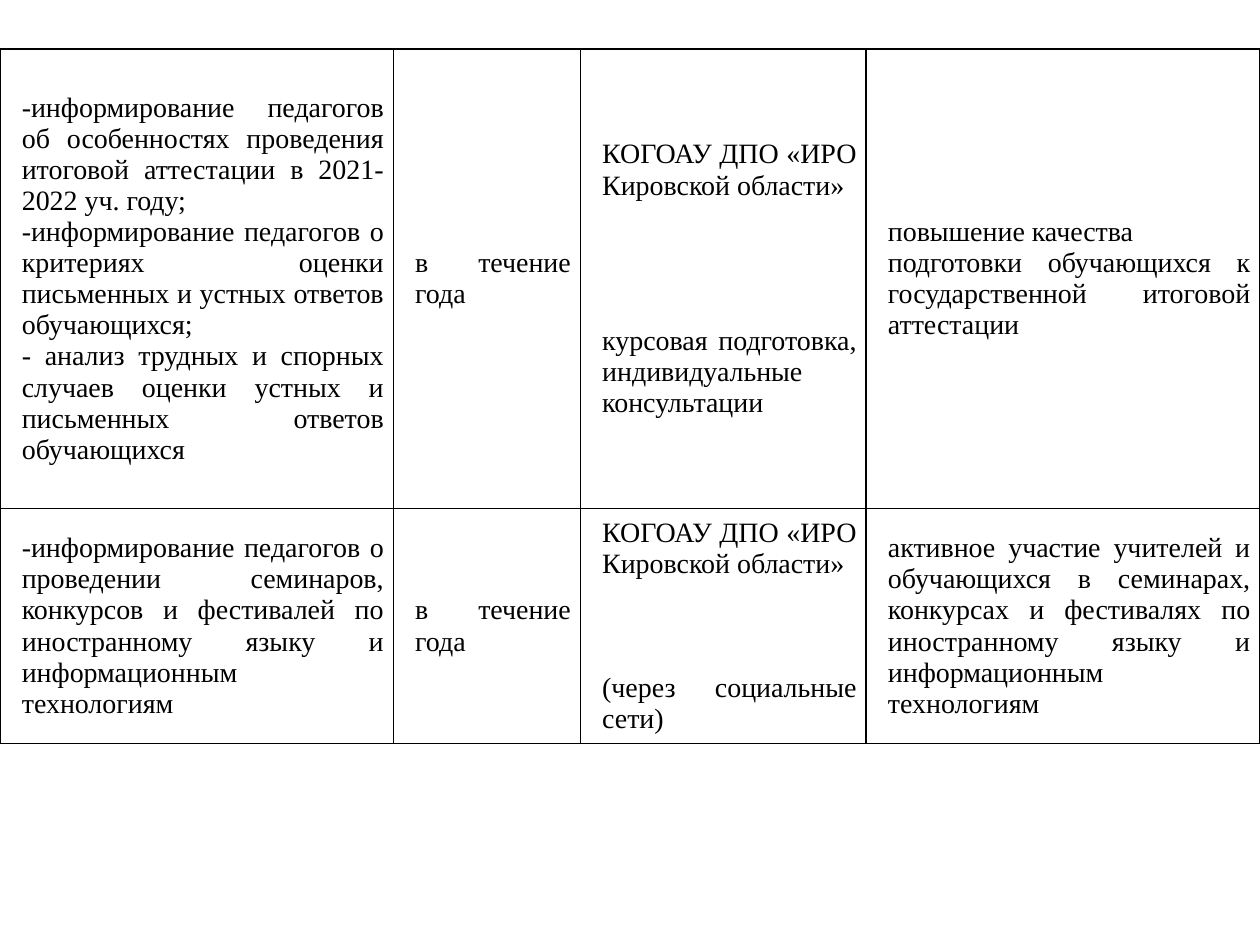
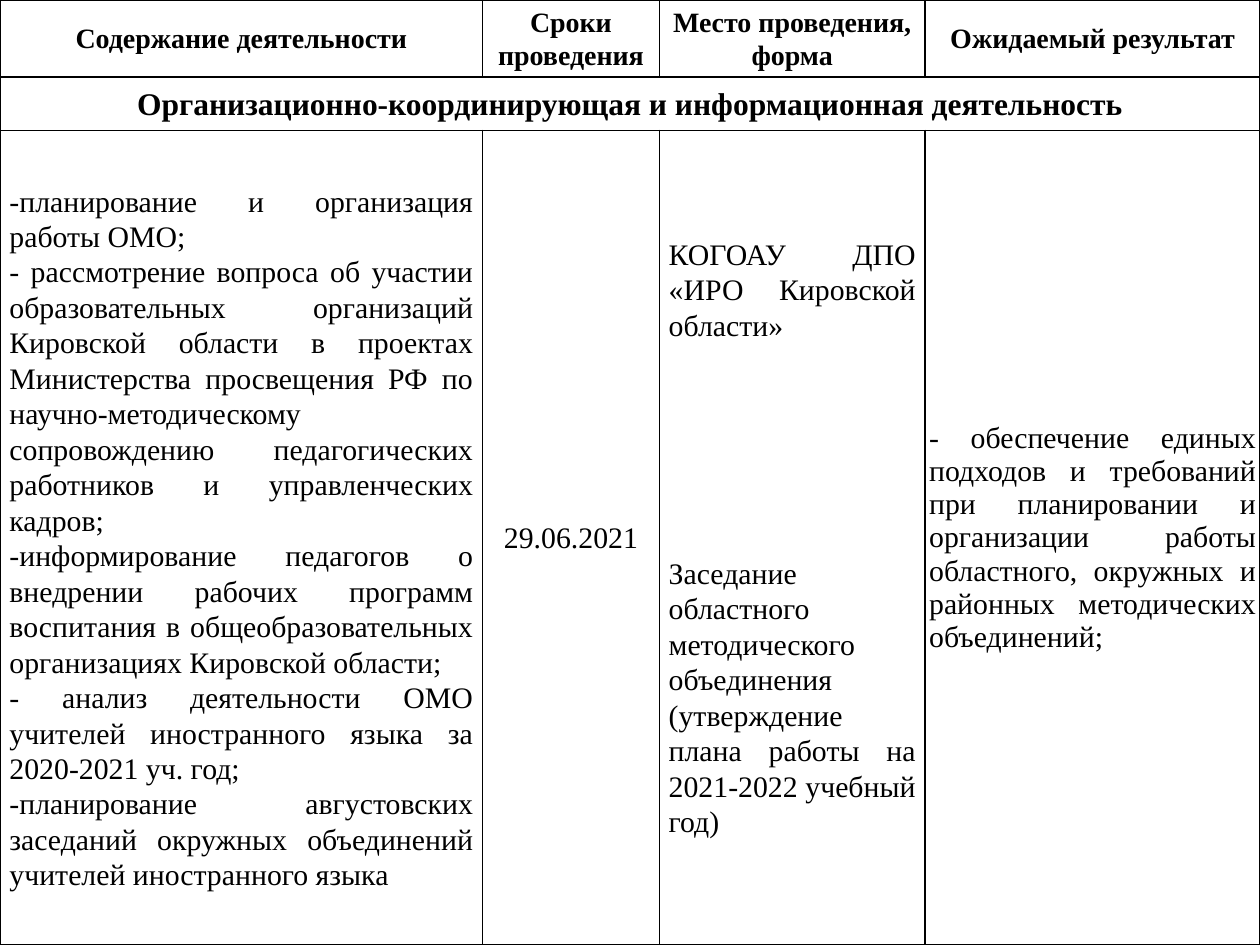
from dataclasses import dataclass

from lxml.etree import SubElement
from pptx import Presentation
from pptx.dml.color import RGBColor
from pptx.enum.text import MSO_ANCHOR, PP_ALIGN
from pptx.oxml.ns import qn
from pptx.util import Cm, Pt

BLACK = RGBColor(0x00, 0x00, 0x00)
WHITE = RGBColor(0xFF, 0xFF, 0xFF)
FONT = "Times New Roman"
SLIDE_WIDTH, SLIDE_HEIGHT = 25.4, 19.05
BORDER = Pt(1)
WIDE_MARGIN, NARROW_MARGIN = 0.19, 0.08
INSTITUTE = "КОГОАУ ДПО «ИРО Кировской области»"


@dataclass(frozen=True)
class CellStyle:
    size: float
    align: PP_ALIGN = PP_ALIGN.JUSTIFY
    bold: bool = False
    margin: float = WIDE_MARGIN
    indent: float = 0
    line_spacing: float = 1.07


ACTIVITY = CellStyle(16, indent=0.25, line_spacing=1.0)
HEADING = CellStyle(16, PP_ALIGN.CENTER, True, NARROW_MARGIN)
SECTION = CellStyle(18, PP_ALIGN.CENTER, True, NARROW_MARGIN)
PLAN = CellStyle(17)
DATE = CellStyle(17, PP_ALIGN.CENTER)
RESULT = CellStyle(17, margin=NARROW_MARGIN, line_spacing=1.0)


def draw_borders(cell):
    properties = cell._tc.get_or_add_tcPr()
    for side in ("lnL", "lnR", "lnT", "lnB"):
        line = SubElement(properties, qn(f"a:{side}"), w=str(BORDER))
        fill = SubElement(line, qn("a:solidFill"))
        SubElement(fill, qn("a:srgbClr"), val=str(BLACK))


def format_cell(cell):
    draw_borders(cell)
    cell.fill.solid()
    cell.fill.fore_color.rgb = WHITE


def write_cell(cell, texts, style, gap=0):
    cell.vertical_anchor = MSO_ANCHOR.MIDDLE
    cell.margin_left = cell.margin_right = Cm(style.margin)
    cell.margin_top = cell.margin_bottom = 0
    cell.text = "\n".join(texts)
    for index, paragraph in enumerate(cell.text_frame.paragraphs):
        paragraph.alignment = style.align
        paragraph.line_spacing = style.line_spacing
        if index and gap:
            paragraph.space_before = Pt(gap)
        if style.indent:
            properties = paragraph._p.get_or_add_pPr()
            properties.set("marL", str(Cm(style.indent)))
            properties.set("indent", "0")
        font = paragraph.font
        font.name, font.size, font.bold = FONT, Pt(style.size), style.bold
        font.color.rgb = BLACK


def add_grid(slide, top, widths, heights):
    grid = slide.shapes.add_table(
        len(heights), len(widths), 0, Cm(top), Cm(sum(widths)), Cm(sum(heights))
    ).table
    grid.first_row = grid.horz_banding = False
    for column, width in zip(grid.columns, widths):
        column.width = Cm(width)
    for row, height in zip(grid.rows, heights):
        row.height = Cm(height)
    for cell in grid.iter_cells():
        format_cell(cell)
    return grid


def build_year_activities(slide):
    grid = add_grid(slide, 0.99, (7.93, 3.77, 5.76, 7.94), (9.26, 4.74))
    activities = (
        (
            (
                "-информирование педагогов об особенностях проведения итоговой "
                "аттестации в 2021-2022 уч. году;",
                "-информирование педагогов о критериях оценки письменных и устных "
                "ответов обучающихся;",
                "- анализ трудных и спорных случаев оценки устных и письменных "
                "ответов обучающихся",
            ),
            "курсовая подготовка, индивидуальные консультации",
            71,
            (
                "повышение качества",
                "подготовки обучающихся к государственной итоговой аттестации",
            ),
        ),
        (
            (
                "-информирование педагогов о проведении семинаров, конкурсов и "
                "фестивалей по иностранному языку и информационным технологиям",
            ),
            "(через социальные сети)",
            53,
            (
                "активное участие учителей и обучающихся в семинарах, конкурсах и "
                "фестивалях по иностранному языку и информационным технологиям",
            ),
        ),
    )
    for row, (content, form, form_gap, results) in enumerate(activities):
        write_cell(grid.cell(row, 0), content, ACTIVITY)
        write_cell(grid.cell(row, 1), ("в течение года",), ACTIVITY)
        write_cell(grid.cell(row, 2), (INSTITUTE, form), ACTIVITY, form_gap)
        write_cell(grid.cell(row, 3), results, ACTIVITY)


def build_coordination_plan(slide):
    grid = add_grid(slide, 0, (9.73, 3.56, 5.36, 6.75), (1.55, 1.08, 16.42))
    headings = (
        "Содержание деятельности",
        "Сроки проведения",
        "Место проведения, форма",
        "Ожидаемый результат",
    )
    for column, heading in enumerate(headings):
        write_cell(grid.cell(0, column), (heading,), HEADING)

    section = grid.cell(1, 0)
    section.merge(grid.cell(1, 3))
    write_cell(
        section,
        ("Организационно-координирующая и информационная деятельность",),
        SECTION,
    )

    content = (
        "-планирование и организация работы ОМО;",
        "- рассмотрение вопроса об участии образовательных организаций Кировской "
        "области в проектах Министерства просвещения РФ по научно-методическому "
        "сопровождению педагогических работников и управленческих кадров;",
        "-информирование педагогов о внедрении рабочих программ воспитания в "
        "общеобразовательных организациях Кировской области;",
        "- анализ деятельности ОМО учителей иностранного языка за 2020-2021 уч. год;",
        "-планирование августовских заседаний окружных объединений учителей "
        "иностранного языка",
    )
    meeting = (
        "Заседание областного методического объединения (утверждение плана "
        "работы на 2021-2022 учебный год)"
    )
    result = (
        "- обеспечение единых подходов и требований при планировании и организации "
        "работы областного, окружных и районных методических объединений;"
    )
    write_cell(grid.cell(2, 0), content, PLAN)
    write_cell(grid.cell(2, 1), ("29.06.2021",), DATE)
    write_cell(grid.cell(2, 2), (INSTITUTE, meeting), PLAN, 121.5)
    write_cell(grid.cell(2, 3), (result,), RESULT)


def main():
    deck = Presentation()
    deck.slide_width, deck.slide_height = Cm(SLIDE_WIDTH), Cm(SLIDE_HEIGHT)
    blank = deck.slide_layouts[6]
    for build in (build_year_activities, build_coordination_plan):
        build(deck.slides.add_slide(blank))
    deck.save("out.pptx")


if __name__ == "__main__":
    main()
